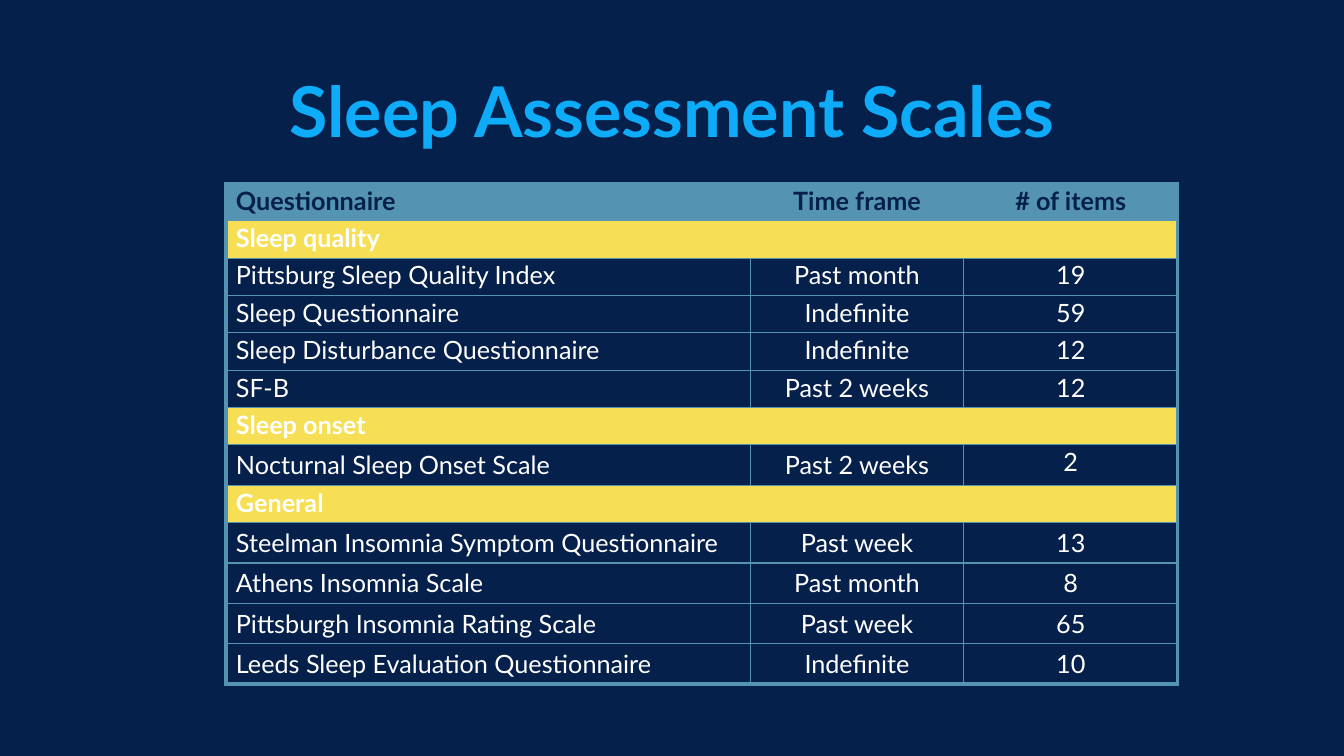
import pptx
import pptx.dml.color
import pptx.enum.text
import pptx.oxml.ns
import pptx.util
from lxml import etree
from pptx.dml.color import RGBColor
from pptx.util import Inches

NAVY = RGBColor(0x06, 0x20, 0x4C)
SKY = RGBColor(0x0D, 0xAB, 0xF8)
TEAL = RGBColor(0x54, 0x93, 0xB2)
YELLOW = RGBColor(0xF6, 0xDE, 0x55)
WHITE = RGBColor(0xFF, 0xFF, 0xFF)

LEFT = pptx.enum.text.PP_ALIGN.LEFT
CENTER = pptx.enum.text.PP_ALIGN.CENTER
TOP = pptx.enum.text.MSO_ANCHOR.TOP
MIDDLE = pptx.enum.text.MSO_ANCHOR.MIDDLE

THIN, THICK = 1, 3
TIGHT, SINGLE = 0.9, 1.0
ROW_HEIGHTS = {TIGHT: 0.37, SINGLE: 0.4}
COLUMN_WIDTHS = [5.2, 2.12, 2.12]

HEADER = ("Questionnaire", "Time frame", "# of items")
# Section name, line spacing of its rows, rows
SECTIONS = [
    ("Sleep quality", TIGHT, [
        ("Pittsburg Sleep Quality Index", "Past month", "19"),
        ("Sleep Questionnaire", "Indefinite", "59"),
        ("Sleep Disturbance Questionnaire", "Indefinite", "12"),
        ("SF-B", "Past 2 weeks", "12"),
    ]),
    ("Sleep onset", SINGLE, [
        ("Nocturnal Sleep Onset Scale", "Past 2 weeks", "2"),
    ]),
    ("General", SINGLE, [
        ("Steelman Insomnia Symptom Questionnaire", "Past week", "13"),
        ("Athens Insomnia Scale", "Past month", "8"),
        ("Pittsburgh Insomnia Rating Scale", "Past week", "65"),
        ("Leeds Sleep Evaluation Questionnaire", "Indefinite", "10"),
    ]),
]


def write_text(frame, text, *, size=18, color=WHITE, bold=False,
               align=LEFT, spacing=SINGLE):
    para = frame.paragraphs[0]
    para.alignment = align
    para.line_spacing = spacing
    span = para.add_run()
    span.text = text
    span.font.name = "Lato"
    span.font.size = pptx.util.Pt(size)
    span.font.color.rgb = color
    span.font.bold = bold


def add_title(page, text):
    box = page.shapes.add_textbox(Inches(0.67), Inches(0.25), Inches(12), Inches(1.67))
    frame = box.text_frame
    frame.word_wrap = True
    frame.vertical_anchor = MIDDLE
    frame.margin_left = frame.margin_right = 0
    frame.margin_top = frame.margin_bottom = Inches(0.01)
    write_text(frame, text, size=50, color=SKY, bold=True, align=CENTER)


def set_borders(cell, **widths):
    """Draw the sides L, R, T and B in points; a width of 0 hides a side."""
    properties = cell._tc.get_or_add_tcPr()
    for position, side in enumerate("LRTB"):
        width = widths[side]
        line = etree.Element(pptx.oxml.ns.qn(f"a:ln{side}"),
                             w=str(pptx.util.Pt(width)))
        if width:
            fill = etree.SubElement(line, pptx.oxml.ns.qn("a:solidFill"))
            etree.SubElement(fill, pptx.oxml.ns.qn("a:srgbClr"), val=str(TEAL))
        else:
            etree.SubElement(line, pptx.oxml.ns.qn("a:noFill"))
        properties.insert(position, line)


def format_row(table, row, fill=None):
    """Fill a row and border it: thick on the table's edge, thin inside."""
    last_row, last_column = len(table.rows) - 1, len(table.columns) - 1
    for column in range(last_column + 1):
        cell = table.cell(row, column)
        if fill is None:
            cell.fill.background()
        else:
            cell.fill.solid()
            cell.fill.fore_color.rgb = fill
        merged = cell.is_merge_origin or cell.is_spanned
        inner = 0 if merged else THIN
        at_right = column == last_column or cell.is_merge_origin
        set_borders(cell,
                    L=THICK if column == 0 else inner,
                    R=THICK if at_right else inner,
                    T=THICK if row == 0 else THIN,
                    B=THICK if row == last_row else THIN)


def add_header_row(table):
    for column, label in enumerate(HEADER):
        cell = table.cell(0, column)
        cell.vertical_anchor = MIDDLE if column else TOP
        write_text(cell.text_frame, label, color=NAVY, bold=True,
                   align=CENTER if column else LEFT, spacing=TIGHT)
    format_row(table, 0, TEAL)


def add_section_row(table, row, name):
    cell = table.cell(row, 0)
    cell.merge(table.cell(row, len(HEADER) - 1))
    write_text(cell.text_frame, name, bold=True, spacing=TIGHT)
    format_row(table, row, YELLOW)


def add_scale_row(table, row, values, spacing):
    for column, value in enumerate(values):
        # The single-digit count of the onset scale is set tight
        tight = value == "2"
        write_text(table.cell(row, column).text_frame, value,
                   align=CENTER if column else LEFT,
                   spacing=TIGHT if tight else spacing)
    format_row(table, row)


def add_scales_table(page):
    heights = [ROW_HEIGHTS[TIGHT]]
    for _, spacing, scales in SECTIONS:
        heights += [ROW_HEIGHTS[TIGHT]] + [ROW_HEIGHTS[spacing]] * len(scales)
    table = page.shapes.add_table(
        len(heights), len(HEADER), Inches(2.24), Inches(1.82),
        Inches(sum(COLUMN_WIDTHS)), Inches(sum(heights))).table
    table.first_row = table.horz_banding = False
    for column, width in zip(table.columns, COLUMN_WIDTHS):
        column.width = Inches(width)
    for row, height in zip(table.rows, heights):
        row.height = Inches(height)

    add_header_row(table)
    row = 1
    for name, spacing, scales in SECTIONS:
        add_section_row(table, row, name)
        for row, values in enumerate(scales, row + 1):
            add_scale_row(table, row, values, spacing)
        row += 1


def main():
    deck = pptx.Presentation()
    deck.slide_width, deck.slide_height = Inches(13.33), Inches(7.5)
    page = deck.slides.add_slide(deck.slide_layouts[6])
    page.background.fill.solid()
    page.background.fill.fore_color.rgb = NAVY
    add_title(page, "Sleep Assessment Scales")
    add_scales_table(page)
    deck.save("out.pptx")


if __name__ == "__main__":
    main()
